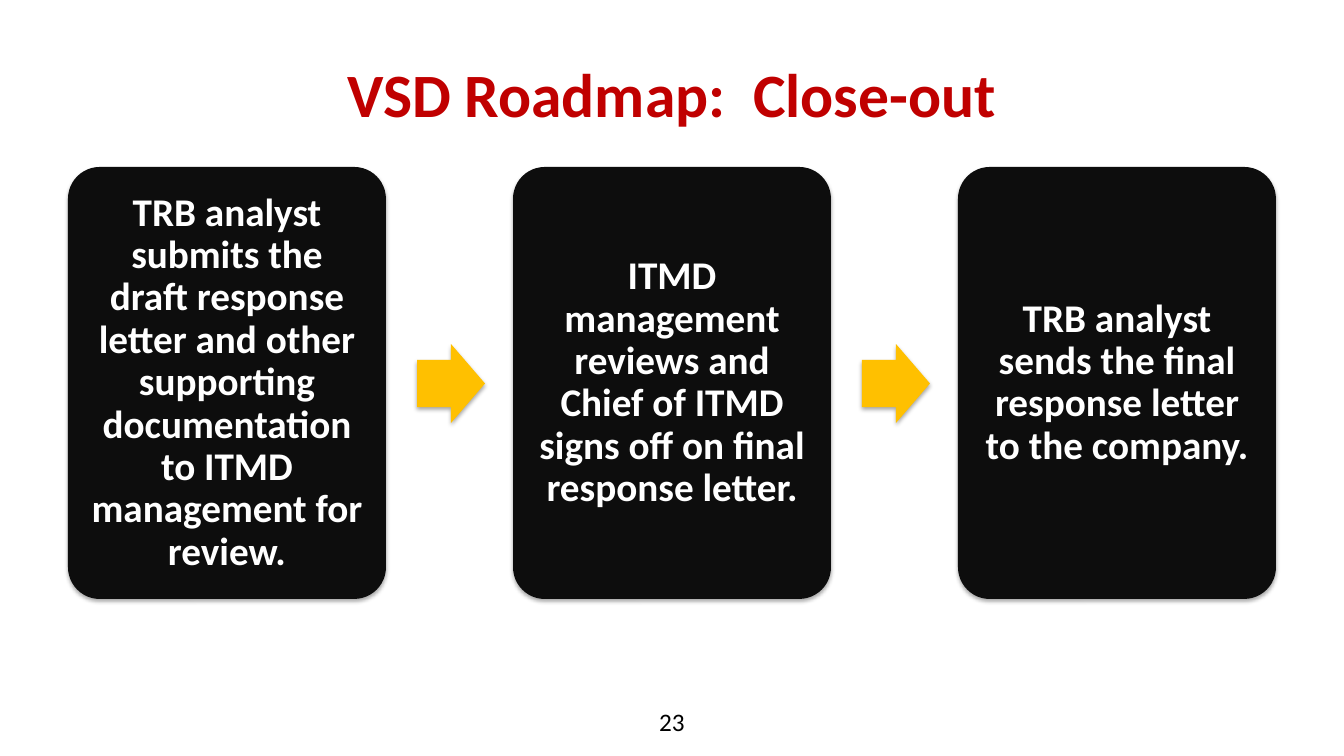
import pptx
import pptx.util
import pptx.dml.color
import pptx.enum.shapes
import pptx.enum.text
import pptx.oxml
import pptx.oxml.ns

PX = 9144000 / 1008
THEME = {
    "font": "Calibri",
    "title": ("C00000", 44, True),
    "step": ("FFFFFF", 28, True),
    "number": ("000000", 18, False),
    "box": "0D0D0D",
    "arrow": "FFC000",
}
SHADOW = (
    f'<a:effectLst {pptx.oxml.ns.nsdecls("a")}>'
    '<a:outerShdw blurRad="40000" dist="23000" dir="5400000" rotWithShape="0">'
    '<a:srgbClr val="000000"><a:alpha val="35000"/></a:srgbClr>'
    '</a:outerShdw></a:effectLst>'
)
SHAPE = pptx.enum.shapes.MSO_SHAPE


def write(tf, text, style):
    """Fill a text frame with one centred paragraph in a theme style."""
    color, size, bold = THEME[style]
    tf.word_wrap = True
    tf.text = text
    p = tf.paragraphs[0]
    p.alignment = pptx.enum.text.PP_ALIGN.CENTER
    font = p.runs[0].font
    font.name, font.size, font.bold = THEME["font"], pptx.util.Pt(size), bold
    font.color.rgb = pptx.dml.color.RGBColor.from_string(color)
    return p


def add_solid(kind, bounds, color, adjustments):
    """Add an unlined filled shape with a soft shadow below it."""
    sp = s.shapes.add_shape(kind, *(round(v * PX) for v in bounds))
    for i, value in enumerate(adjustments):
        sp.adjustments[i] = value
    sp.fill.solid()
    sp.fill.fore_color.rgb = pptx.dml.color.RGBColor.from_string(color)
    sp.line.fill.background()
    sp._element.spPr.append(pptx.oxml.parse_xml(SHADOW))
    return sp


prs = pptx.Presentation()
prs.slide_width, prs.slide_height = round(1344 * PX), round(756 * PX)
s = prs.slides.add_slide(prs.slide_layouts[5])

title = s.shapes.title
title.left, title.top, title.width, title.height = (
    round(v * PX) for v in (67, 30, 1210, 126))
title.text_frame.vertical_anchor = pptx.enum.text.MSO_ANCHOR.MIDDLE
write(title.text_frame, "VSD Roadmap:  Close-out", "title")

steps = [
    "TRB analyst submits the draft response letter and other supporting "
    "documentation to ITMD management for review.",
    "ITMD management reviews and Chief of ITMD signs off on final "
    "response letter.",
    "TRB analyst sends the final response letter to the company.",
]
for i, text in enumerate(steps):
    left = 68 + 445 * i
    box = add_solid(SHAPE.ROUNDED_RECTANGLE, (left, 167, 318, 432),
                    THEME["box"], [0.1])
    tf = box.text_frame
    tf.margin_left = tf.margin_right = round(12 * PX)
    tf.margin_top = tf.margin_bottom = round(12 * PX)
    tf.vertical_anchor = pptx.enum.text.MSO_ANCHOR.MIDDLE
    write(tf, text, "step").line_spacing = 0.9
    if i < len(steps) - 1:
        add_solid(SHAPE.RIGHT_ARROW, (left + 349, 344, 68, 79),
                  THEME["arrow"], [0.6, 0.5])

number = s.shapes.add_textbox(*(round(v * PX) for v in (515, 701, 314, 40)))
write(number.text_frame, "23", "number")

prs.save("out.pptx")
